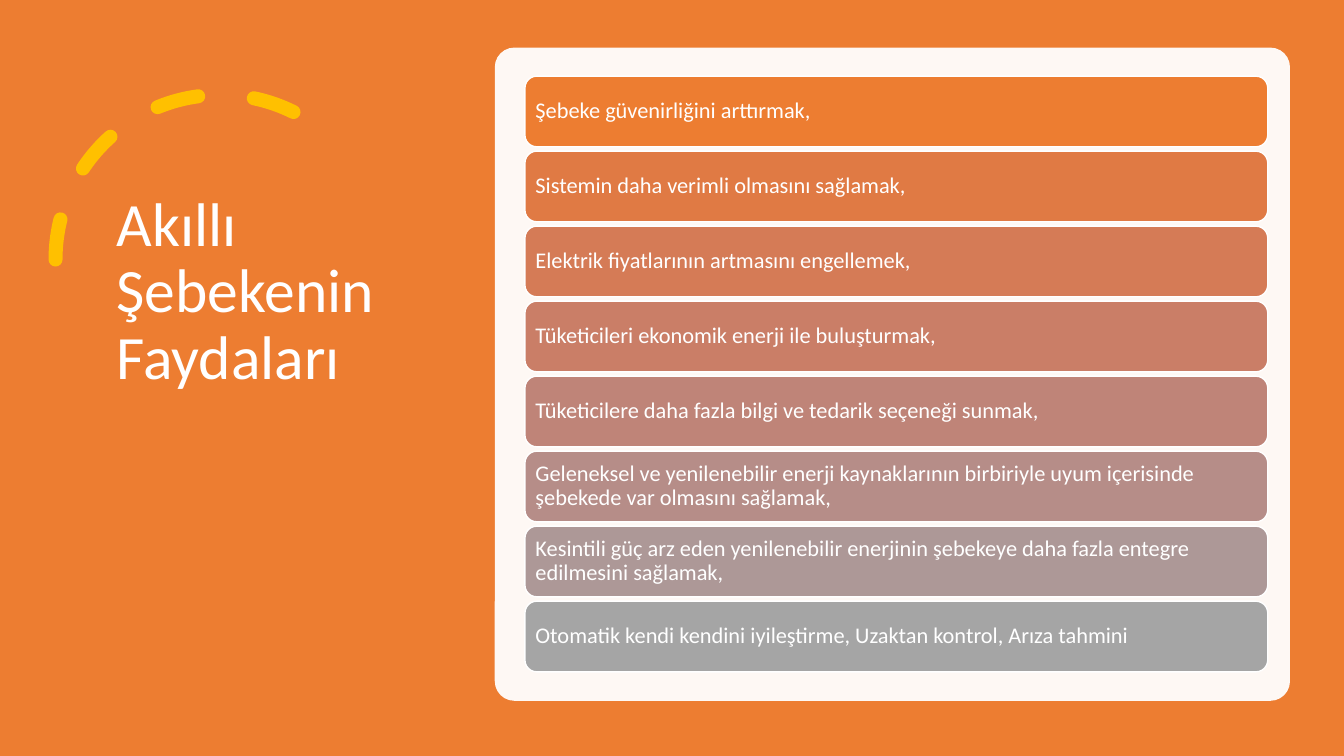
import pptx
import pptx.dml.color
import pptx.enum.dml
import pptx.enum.shapes
import pptx.enum.text
import pptx.oxml.ns
import pptx.util
from lxml import etree

Cm = pptx.util.Cm
Pt = pptx.util.Pt
SHAPE = pptx.enum.shapes.MSO_SHAPE

WIDTH, HEIGHT = 33.87, 19.05
ORANGE, YELLOW, WHITE = "ED7D31", "FFC000", "FFFFFF"

BENEFITS = [
    ("Şebeke güvenirliğini arttırmak,", ORANGE),
    ("Sistemin daha verimli olmasını sağlamak,", "E07A44"),
    ("Elektrik fiyatlarının artmasını engellemek,", "D57B56"),
    ("Tüketicileri ekonomik enerji ile buluşturmak,", "CA7E67"),
    ("Tüketicilere daha fazla bilgi ve tedarik seçeneği sunmak,", "BF8478"),
    ("Geleneksel ve yenilenebilir enerji kaynaklarının birbiriyle uyum "
     "içerisinde şebekede var olmasını sağlamak,", "B68D88"),
    ("Kesintili güç arz eden yenilenebilir enerjinin şebekeye daha fazla "
     "entegre edilmesini sağlamak,", "AD9897"),
    ("Otomatik kendi kendini iyileştirme, Uzaktan kontrol, Arıza tahmini", "A5A5A5"),
]


def rgb(value):
    return pptx.dml.color.RGBColor.from_string(value)


class Deck:
    """Holds the slide and its text style."""

    font = "Calibri"
    color = WHITE

    def __init__(self, prs):
        self.s = prs.slides.add_slide(prs.slide_layouts[6])

    def shape(self, kind, box, fill=None, line=None, width=1):
        sp = self.s.shapes.add_shape(kind, *map(Cm, box))
        sp.shadow.inherit = False
        if fill:
            sp.fill.solid()
            sp.fill.fore_color.rgb = rgb(fill)
        else:
            sp.fill.background()
        if line:
            sp.line.color.rgb = rgb(line)
            sp.line.width = Pt(width)
        else:
            sp.line.fill.background()
        return sp

    def panel(self, box, fill, radius, opacity):
        sp = self.shape(SHAPE.ROUNDED_RECTANGLE, box, fill)
        sp.adjustments[0] = radius
        clr = sp._element.spPr.find(".//" + pptx.oxml.ns.qn("a:srgbClr"))
        etree.SubElement(clr, pptx.oxml.ns.qn("a:alpha"), val=str(opacity * 1000))

    def dashed_arc(self, box, color, width, start, end):
        sp = self.shape(SHAPE.ARC, box, line=color, width=width)
        # Arc angles are stored in 60000ths of a degree
        sp.adjustments[0], sp.adjustments[1] = start * 0.6, end * 0.6
        sp.line.dash_style = pptx.enum.dml.MSO_LINE.DASH
        spPr = sp._element.spPr
        spPr.find(pptx.oxml.ns.qn("a:ln")).set("cap", "rnd")
        spPr.find(pptx.oxml.ns.qn("a:xfrm")).set("flipH", "1")

    def fill_text(self, tf, text, size, inset):
        tf.word_wrap = True
        tf.vertical_anchor = pptx.enum.text.MSO_ANCHOR.MIDDLE
        tf.margin_left = tf.margin_right = Cm(inset)
        tf.margin_top = tf.margin_bottom = Cm(inset)
        p = tf.paragraphs[0]
        p.alignment = pptx.enum.text.PP_ALIGN.LEFT
        p.line_spacing = 0.9
        r = p.add_run()
        r.text = text
        r.font.name = self.font
        r.font.size = Pt(size)
        r.font.color.rgb = rgb(self.color)

    def title(self, box, text):
        sp = self.s.shapes.add_textbox(*map(Cm, box))
        self.fill_text(sp.text_frame, text, 44, 0.25)

    def bar(self, box, text, fill):
        sp = self.shape(SHAPE.ROUNDED_RECTANGLE, box, fill, WHITE)
        self.fill_text(sp.text_frame, text, 16, 0.18)


def main():
    prs = pptx.Presentation()
    prs.slide_width, prs.slide_height = Cm(WIDTH), Cm(HEIGHT)
    deck = Deck(prs)

    # Background and title
    deck.shape(SHAPE.RECTANGLE, (0, 0, WIDTH, HEIGHT), ORANGE)
    deck.dashed_arc((1.4, 2.39, 8.3, 8.3), YELLOW, 10, 243.55, 0)
    deck.title((2.69, -0.36, 9.96, 15.47), "Akıllı Şebekenin Faydaları")

    # Benefits on a panel
    deck.panel((12.47, 1.2, 20.04, 16.46), WHITE, 0.03, 95)
    top, pitch = 1.92, 1.89
    for i, (text, fill) in enumerate(BENEFITS):
        deck.bar((13.23, top + i * pitch, 18.72, 1.78), text, fill)

    prs.save("out.pptx")


if __name__ == "__main__":
    main()
